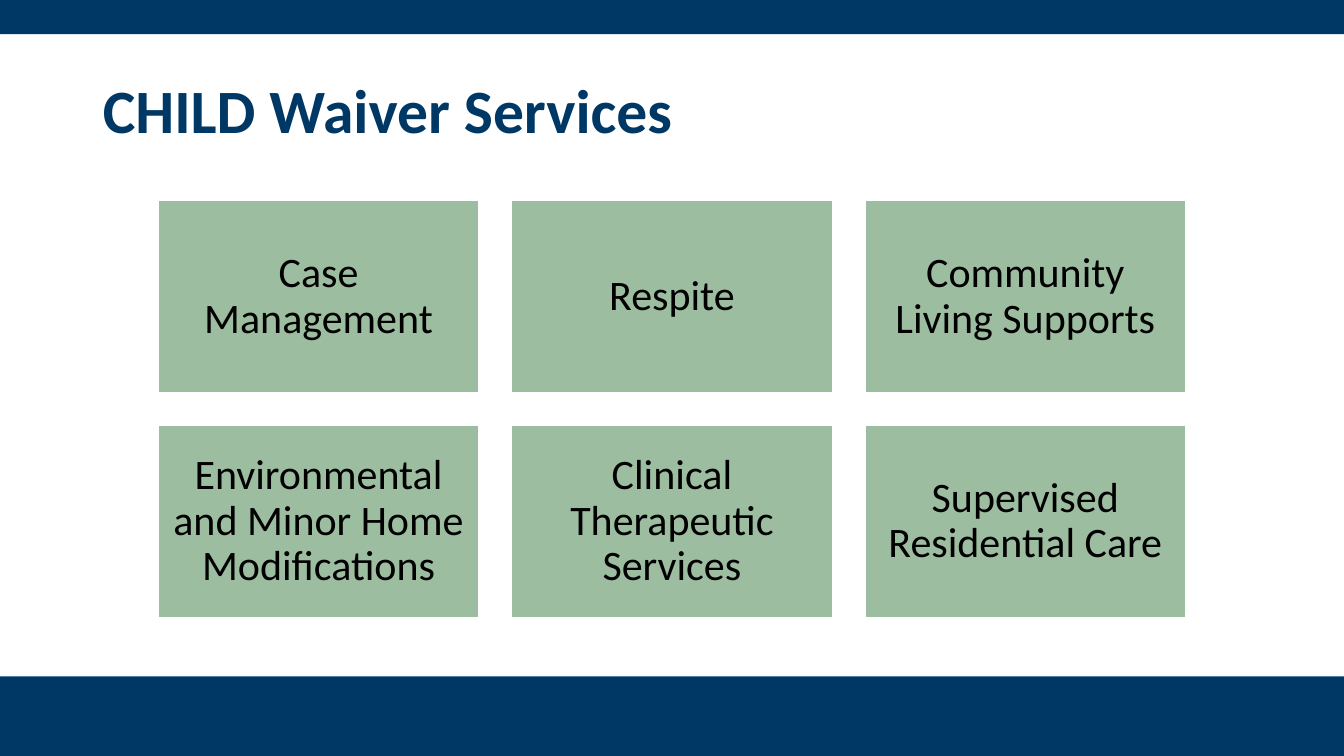
from dataclasses import dataclass

from pptx import Presentation
from pptx.dml.color import RGBColor
from pptx.enum.shapes import MSO_SHAPE
from pptx.enum.text import MSO_ANCHOR, PP_ALIGN
from pptx.util import Inches, Pt

RECT = MSO_SHAPE.RECTANGLE
MIDDLE = MSO_ANCHOR.MIDDLE
LEFT, CENTER = PP_ALIGN.LEFT, PP_ALIGN.CENTER
TITLE_ONLY = 5


@dataclass(frozen=True)
class Theme:
    navy: str = "003865"
    sage: str = "9DBDA1"
    white: str = "FFFFFF"
    black: str = "000000"
    font: str = "Calibri"
    title_size: int = 44
    card_size: int = 30


SLIDE_W, SLIDE_H = 13.33, 7.5
TOP_BAND_H, BOTTOM_BAND_H = 0.34, 0.79
CARD_W, CARD_H = 3.18, 1.91
GRID_LEFT, GRID_TOP = 1.57, 1.99
STEP_X, STEP_Y = 3.505, 2.23
COLUMNS = 3
SERVICES = [
    "Case Management",
    "Respite",
    "Community Living Supports",
    "Environmental and Minor Home Modifications",
    "Clinical Therapeutic Services",
    "Supervised Residential Care",
]


def write_text(tf, text, *, font, size, color, bold=False, align=LEFT, inset=None):
    tf.word_wrap = True
    tf.vertical_anchor = MIDDLE
    if inset is not None:
        tf.margin_left = tf.margin_right = Inches(inset)
        tf.margin_top = tf.margin_bottom = Inches(inset)
    p = tf.paragraphs[0]
    p.alignment = align
    p.line_spacing = 0.9
    r = p.add_run()
    r.text = text
    r.font.name = font
    r.font.size = Pt(size)
    r.font.bold = bold
    r.font.color.rgb = RGBColor.from_string(color)


class SlideBuilder:
    def __init__(self, slide, theme):
        self.slide = slide
        self.theme = theme

    def rectangle(self, x, y, w, h, fill, line=None):
        sp = self.slide.shapes.add_shape(RECT, Inches(x), Inches(y), Inches(w), Inches(h))
        sp.shadow.inherit = False
        sp.fill.solid()
        sp.fill.fore_color.rgb = RGBColor.from_string(fill)
        if line:
            sp.line.color.rgb = RGBColor.from_string(line)
            sp.line.width = Pt(1)
        else:
            sp.line.fill.background()
        return sp

    def band(self, y, h):
        self.rectangle(0, y, SLIDE_W, h, self.theme.navy)

    def title(self, text):
        sp = self.slide.shapes.title
        sp.left, sp.top = Inches(0.92), Inches(0.4)
        sp.width, sp.height = Inches(11.5), Inches(1.45)
        write_text(sp.text_frame, text, font=self.theme.font,
                   size=self.theme.title_size, color=self.theme.navy, bold=True)

    def card(self, x, y, text):
        sp = self.rectangle(x, y, CARD_W, CARD_H, self.theme.sage, self.theme.white)
        write_text(sp.text_frame, text, font=self.theme.font, size=self.theme.card_size,
                   color=self.theme.black, align=CENTER, inset=0.12)


def main():
    prs = Presentation()
    prs.slide_width, prs.slide_height = Inches(SLIDE_W), Inches(SLIDE_H)
    s = SlideBuilder(prs.slides.add_slide(prs.slide_layouts[TITLE_ONLY]), Theme())
    s.band(SLIDE_H - BOTTOM_BAND_H, BOTTOM_BAND_H)
    s.band(0, TOP_BAND_H)
    s.title("CHILD Waiver Services")
    for i, service in enumerate(SERVICES):
        row, col = divmod(i, COLUMNS)
        s.card(GRID_LEFT + col * STEP_X, GRID_TOP + row * STEP_Y, service)
    prs.save("out.pptx")


if __name__ == "__main__":
    main()
